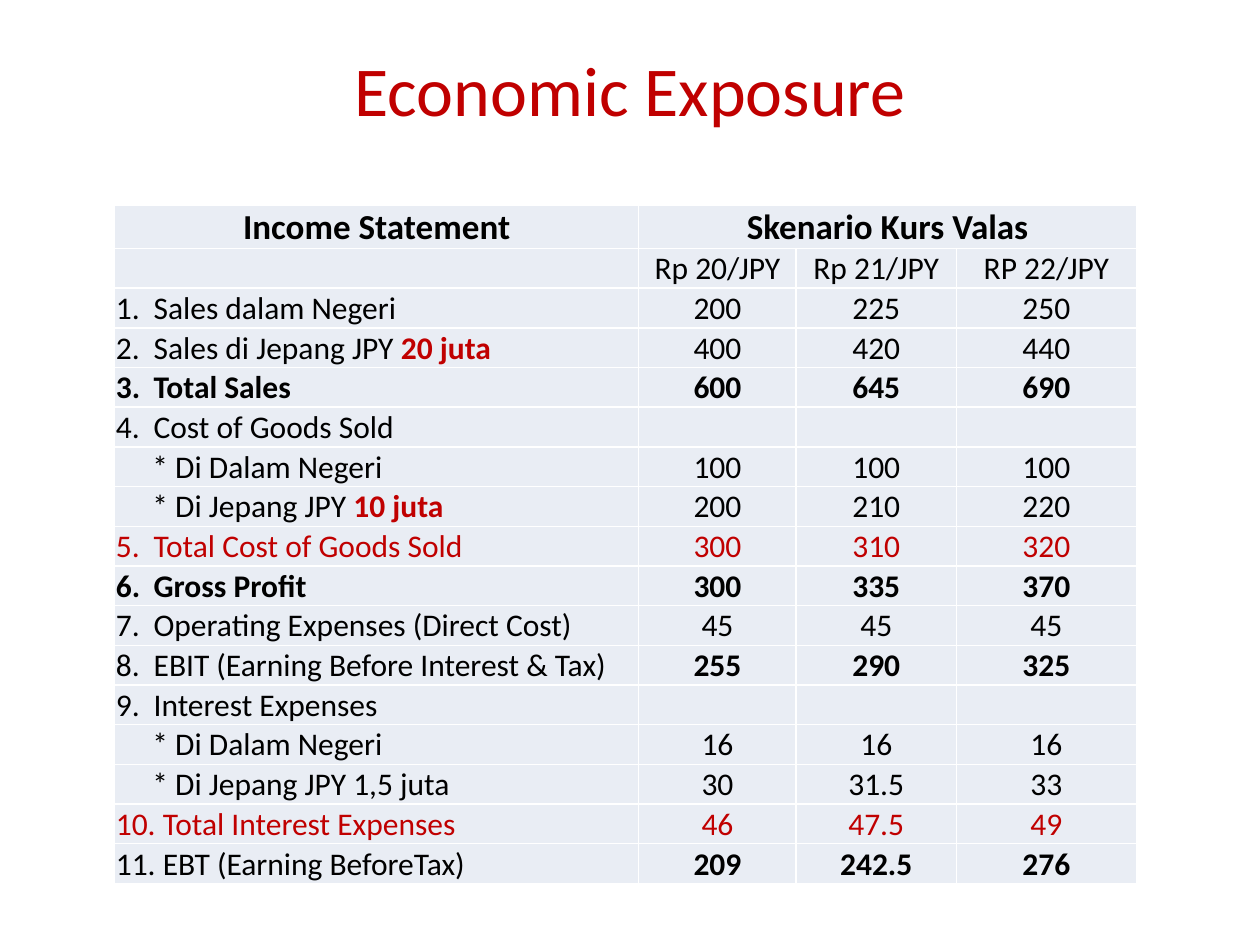
"""Build the Economic Exposure slide with its income statement table."""
from lxml import etree
from pptx import Presentation
from pptx.dml.color import RGBColor
from pptx.enum import text as tx
from pptx.oxml import ns
from pptx.util import Pt

RED, BLACK, WHITE, PALE = "C00000", "000000", "FFFFFF", "E9EDF4"
WIDTHS = [299.5, 90, 91.5, 103]
HEAD, ROW, HANG = 25, 22.7, 21.6
BOLD = {"bold": True}
TINT = {"color": RED}
NONE = ["", "", ""]

# label, red tail, values, label format, value format
ROWS = [
    ("", "", ["Rp 20/JPY", "Rp 21/JPY", "RP 22/JPY"], {}, {}),
    ("1.\tSales dalam Negeri", "", ["200", "225", "250"], {}, {}),
    ("2.\tSales di Jepang JPY ", "20 juta", ["400", "420", "440"], {}, {}),
    ("3.\tTotal Sales", "", ["600", "645", "690"], BOLD, BOLD),
    ("4.\tCost of Goods Sold", "", NONE, {}, {}),
    ("* Di Dalam Negeri", "", ["100", "100", "100"], {}, {}),
    ("* Di Jepang JPY ", "10 juta", ["200", "210", "220"], {}, {}),
    ("5.\tTotal Cost of Goods Sold", "", ["300", "310", "320"], TINT, TINT),
    ("6.\tGross Profit", "", ["300", "335", "370"], BOLD, BOLD),
    ("7.\tOperating Expenses (Direct Cost)", "", ["45", "45", "45"], {}, {}),
    ("8.\tEBIT (Earning Before Interest & Tax)", "", ["255", "290", "325"], {}, BOLD),
    ("9.\tInterest Expenses", "", NONE, {}, {}),
    ("* Di Dalam Negeri", "", ["16", "16", "16"], {}, {}),
    ("* Di Jepang JPY 1,5 juta", "", ["30", "31.5", "33"], {}, {}),
    ("10. Total Interest Expenses", "", ["46", "47.5", "49"], TINT, TINT),
    ("11. EBT (Earning BeforeTax)", "", ["209", "242.5", "276"], {}, BOLD),
]


def rgb(code):
    """Turn a hex string into a colour."""
    return RGBColor.from_string(code)


def write(para, words, size=18, color=BLACK, bold=False, align="CENTER"):
    """Add a formatted run to a paragraph."""
    para.alignment = getattr(tx.PP_ALIGN, align)
    if words:
        run = para.add_run()
        run.text = words
        font = run.font
        font.name, font.size, font.bold = "Calibri", Pt(size), bold
        font.color.rgb = rgb(color)


def dress(cell):
    """Set the margins, fill and borders of a cell."""
    cell.margin_left = cell.margin_right = cell.margin_top = Pt(0.7)
    cell.margin_bottom = 0
    cell.vertical_anchor = tx.MSO_ANCHOR.BOTTOM
    props = cell._tc.get_or_add_tcPr()
    for side in ("lnL", "lnR", "lnT", "lnB"):
        line = etree.SubElement(props, ns.qn("a:" + side), w=str(Pt(1)))
        fill = etree.SubElement(line, ns.qn("a:solidFill"))
        etree.SubElement(fill, ns.qn("a:srgbClr"), val=WHITE)
    cell.fill.solid()
    cell.fill.fore_color.rgb = rgb(PALE)


def label(cell, words, tail, style):
    """Write a row label, indented or with a hanging number."""
    para = cell.text_frame.paragraphs[0]
    if words.startswith("*"):
        cell.margin_left = Pt(HANG)
    elif "\t" in words:
        props = para._p.get_or_add_pPr()
        props.set("marL", str(Pt(HANG)))
        props.set("indent", str(-Pt(HANG)))
    write(para, words, align="LEFT", **style)
    write(para, tail, color=RED, bold=True, align="LEFT")


def main():
    """Draw the title and the table, then save."""
    deck = Presentation()
    deck.slide_width, deck.slide_height = Pt(720), Pt(540)
    slide = deck.slides.add_slide(deck.slide_layouts[6])

    title = slide.shapes.add_textbox(Pt(36), Pt(22), Pt(648), Pt(57)).text_frame
    title.word_wrap = True
    title.vertical_anchor = tx.MSO_ANCHOR.MIDDLE
    write(title.paragraphs[0], "Economic Exposure", size=40, color=RED)

    high = HEAD + ROW * len(ROWS)
    table = slide.shapes.add_table(len(ROWS) + 1, len(WIDTHS), Pt(65.5), Pt(117),
                                   Pt(sum(WIDTHS)), Pt(high)).table
    table.first_row = table.horz_banding = False
    for col, wide in zip(table.columns, WIDTHS):
        col.width = Pt(wide)
    for num, row in enumerate(table.rows):
        row.height = Pt(ROW if num else HEAD)
        for cell in row.cells:
            dress(cell)

    table.cell(0, 1).merge(table.cell(0, 3))
    for col, words in enumerate(["Income Statement", "Skenario Kurs Valas"]):
        write(table.cell(0, col).text_frame.paragraphs[0], words, size=20, bold=True)
    for num, (words, tail, values, style, look) in enumerate(ROWS, 1):
        label(table.cell(num, 0), words, tail, style)
        for col, value in enumerate(values, 1):
            write(table.cell(num, col).text_frame.paragraphs[0], value, **look)
    deck.save("out.pptx")


if __name__ == "__main__":
    main()
